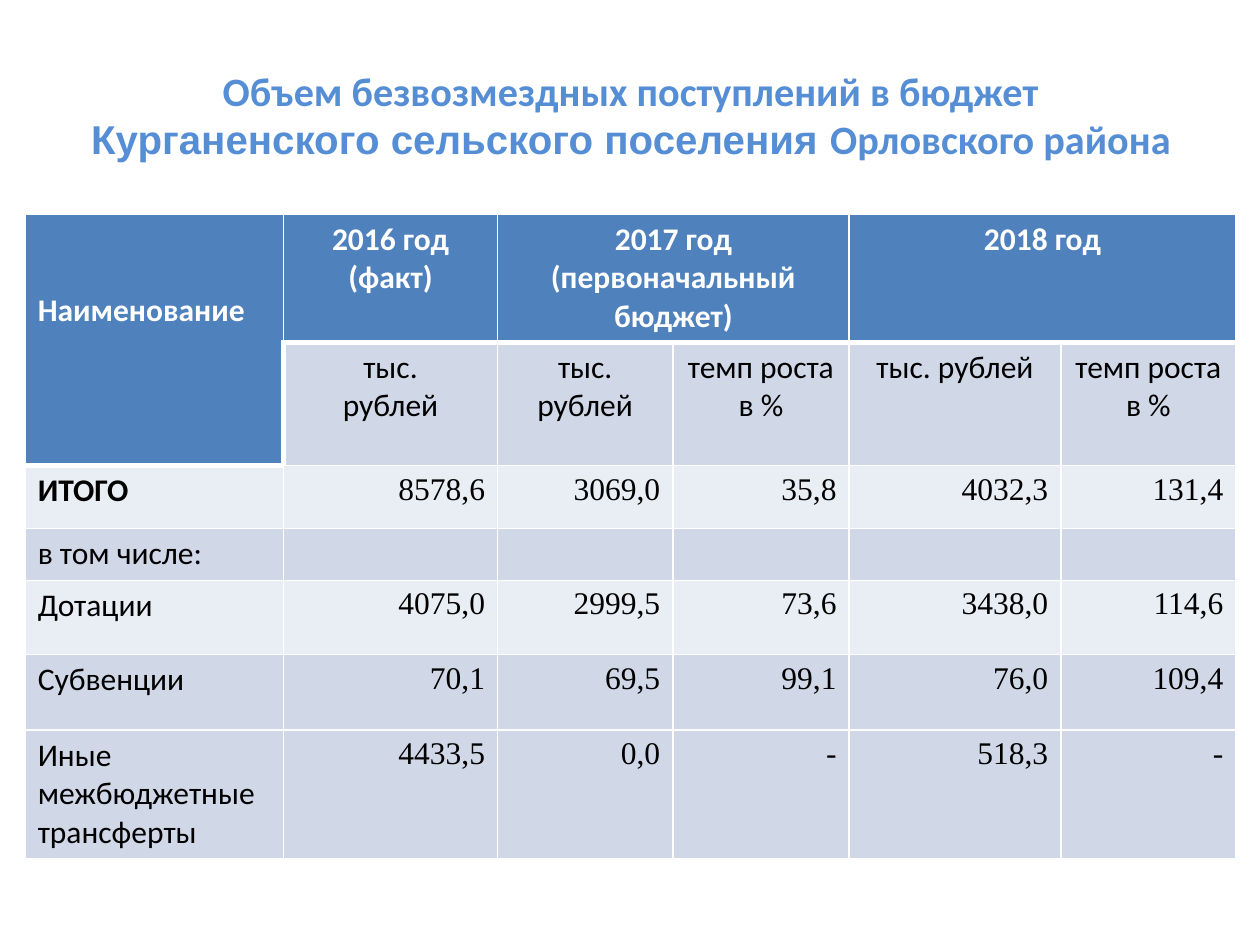
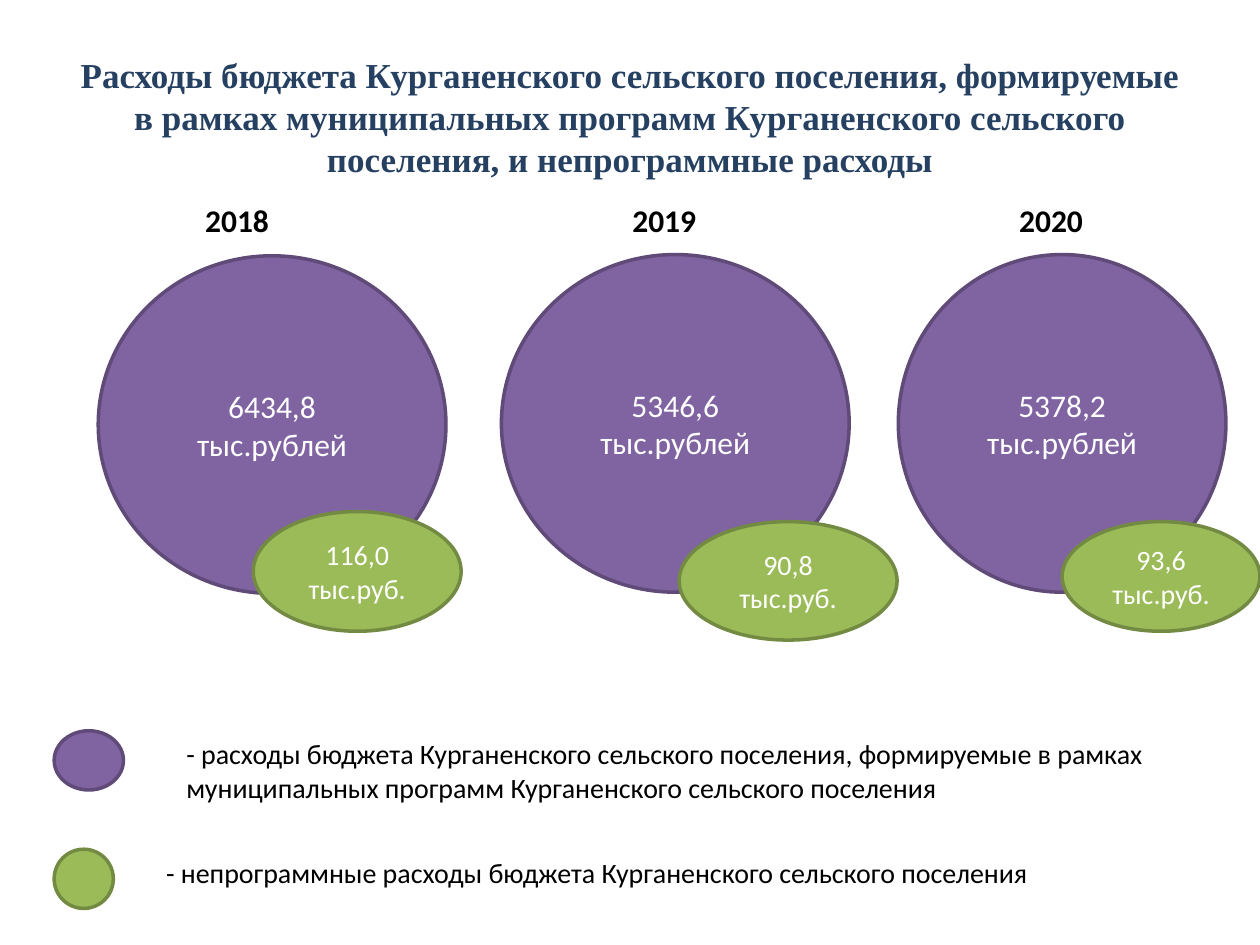
"""Builds two slides on the budget of a rural settlement: transfers received and programme spending."""
from dataclasses import dataclass

from lxml.etree import SubElement
from pptx import Presentation
from pptx.dml.color import RGBColor
from pptx.enum.shapes import MSO_SHAPE
from pptx.enum.text import MSO_ANCHOR, MSO_AUTO_SIZE, PP_ALIGN
from pptx.oxml.ns import qn
from pptx.util import Inches, Pt


@dataclass(frozen=True)
class Theme:
    white: str = "FFFFFF"
    black: str = "000000"
    sky: str = "558ED5"
    navy: str = "254061"
    header: str = "4F81BD"
    band_dark: str = "D0D8E8"
    band_light: str = "E9EDF4"
    programme: tuple = ("8064A2", "5F4A78")
    other: tuple = ("9BBB59", "738A42")
    sans: str = "Calibri"
    arial: str = "Arial"
    serif: str = "Times New Roman"
    large_title: int = 23
    title: int = 20
    body: int = 18
    small: int = 16
    outline: int = 2
    thin: int = 1
    thick: int = 3


class SlideBuilder:
    def __init__(self, theme):
        self.theme = theme
        self.deck = Presentation()
        self.deck.slide_width = Inches(10)
        self.deck.slide_height = Inches(7.5)
        self.page = None

    def style_span(self, span, size, color, bold=False, font=None):
        span.font.size = Pt(size)
        span.font.name = font or self.theme.sans
        span.font.bold = bold
        span.font.color.rgb = RGBColor.from_string(color)

    def set_text(self, frame, text, size, color, align=PP_ALIGN.LEFT, bold=False, font=None):
        frame.text = text
        frame.word_wrap = True
        for para in frame.paragraphs:
            para.alignment = align
            para.font.size = Pt(size)
            for span in para.runs:
                self.style_span(span, size, color, bold, font)

    def add_page(self, place, parts, size, color):
        self.page = self.deck.slides.add_slide(self.deck.slide_layouts[5])
        title = self.page.shapes.title
        title.left, title.top, title.width, title.height = map(Inches, place)
        frame = title.text_frame
        frame.auto_size = MSO_AUTO_SIZE.NONE
        frame.vertical_anchor = MSO_ANCHOR.MIDDLE
        para = frame.paragraphs[0]
        para.alignment = PP_ALIGN.CENTER
        for text, font in parts:
            span = para.add_run()
            span.text = text
            self.style_span(span, size, color, True, font)

    def add_label(self, place, text, size, bold=False):
        box = self.page.shapes.add_textbox(*map(Inches, place))
        self.set_text(box.text_frame, text, size, self.theme.black, bold=bold)

    def add_ellipse(self, place, colors, text="", size=None):
        oval = self.page.shapes.add_shape(MSO_SHAPE.OVAL, *map(Inches, place))
        fill, line = colors
        oval.shadow.inherit = False
        oval.fill.solid()
        oval.fill.fore_color.rgb = RGBColor.from_string(fill)
        oval.line.color.rgb = RGBColor.from_string(line)
        oval.line.width = Pt(self.theme.outline)
        if text:
            oval.text_frame.vertical_anchor = MSO_ANCHOR.MIDDLE
            self.set_text(oval.text_frame, text, size, self.theme.white, PP_ALIGN.CENTER)

    def add_table(self, place, widths, heights):
        frame = self.page.shapes.add_table(len(heights), len(widths), *map(Inches, place))
        table = frame.table
        table.first_row = table.horz_banding = False
        for column, width in zip(table.columns, widths):
            column.width = Inches(width)
        for row, height in zip(table.rows, heights):
            row.height = Inches(height)
        return table

    def paint_cell(self, cell, color, thick_sides):
        properties = cell._tc.get_or_add_tcPr()
        for side in "LRTB":
            width = self.theme.thick if side in thick_sides else self.theme.thin
            line = SubElement(properties, qn(f"a:ln{side}"), w=str(Pt(width)))
            SubElement(SubElement(line, qn("a:solidFill")), qn("a:srgbClr"), val=self.theme.white)
        cell.fill.solid()
        cell.fill.fore_color.rgb = RGBColor.from_string(color)


def thick_sides(row, column):
    if row == 0:
        return "B"
    if row == 1:
        return {0: "RB", 1: "LT"}.get(column, "T")
    return "T" if (row, column) == (2, 0) else ""


def build_transfers(builder):
    theme = builder.theme
    builder.add_page(
        (0.51, 0.36, 9, 1.1),
        [("Объем безвозмездных поступлений в бюджет ", theme.sans),
         ("Курганенского сельского поселения ", theme.arial),
         ("Орловского района", theme.sans)],
        theme.large_title, theme.sky)

    rows = [
        ["Наименование", "2016 год (факт)", "2017 год (первоначальный бюджет)", "", "2018 год", ""],
        ["", "тыс.\nрублей", "тыс. рублей", "темп роста в %", "тыс. рублей", "темп роста в %"],
        ["ИТОГО", "8578,6", "3069,0", "35,8", "4032,3", "131,4"],
        ["в том числе:", "", "", "", "", ""],
        ["Дотации", "4075,0", "2999,5", "73,6", "3438,0", "114,6"],
        ["Субвенции", "70,1", "69,5", "99,1", "76,0", "109,4"],
        ["Иные межбюджетные трансферты", "4433,5", "0,0", "-", "518,3", "-"],
    ]
    fills = [theme.header, theme.band_dark, theme.band_light, theme.band_dark,
             theme.band_light, theme.band_dark, theme.band_dark]
    table = builder.add_table((0.2, 1.7, 9.61, 5.1), [2.05, 1.7, 1.39, 1.4, 1.68, 1.39],
                              [1, 0.98, 0.5, 0.41, 0.59, 0.6, 1.02])

    for row, texts in enumerate(rows):
        for column, text in enumerate(texts):
            cell = table.cell(row, column)
            is_name = column == 0
            is_header = row == 0 or (row == 1 and is_name)
            is_value = row > 1 and not is_name
            builder.paint_cell(cell, theme.header if is_header else fills[row],
                               thick_sides(row, column))
            align = PP_ALIGN.LEFT if is_name else PP_ALIGN.RIGHT if is_value else PP_ALIGN.CENTER
            builder.set_text(cell.text_frame, text, theme.body,
                             theme.white if is_header else theme.black, align,
                             is_header or text == "ИТОГО", theme.serif if is_value else theme.sans)

    table.cell(0, 0).merge(table.cell(1, 0))
    table.cell(0, 0).margin_top = Inches(0.61)
    for column in (2, 4):
        table.cell(0, column).merge(table.cell(0, column + 1))


def build_spending(builder):
    theme = builder.theme
    builder.add_page(
        (0.5, 0.3, 9, 1.25),
        [("Расходы бюджета Курганенского сельского поселения, формируемые в рамках муниципальных "
          "программ Курганенского сельского поселения, и непрограммные расходы", theme.serif)],
        theme.title, theme.navy)

    years = [
        ("2018", 1.53, "6434,8", (0.78, 2.03, 2.76, 2.68), "116,0 тыс.руб.", (2.01, 4.06, 1.65, 0.95)),
        ("2019", 4.92, "5346,6", (3.98, 2.02, 2.76, 2.68), "90,8\nтыс.руб.", (5.39, 4.14, 1.73, 0.94)),
        ("2020", 7.99, "5378,2", (7.13, 2.02, 2.6, 2.68), "93,6 тыс.руб.", (8.43, 4.14, 1.57, 0.87)),
    ]
    for year, left, programme, programme_place, other, other_place in years:
        builder.add_label((left, 1.55, 0.79, 0.4), year, theme.body, bold=True)
        builder.add_ellipse(programme_place, theme.programme, f"{programme}\nтыс.рублей", theme.body)
        builder.add_ellipse(other_place, theme.other, other, theme.small)

    legend = [
        (theme.programme, (0.43, 5.8, 0.55, 0.47), (1.38, 5.8, 7.95, 0.64),
         "- расходы бюджета Курганенского сельского поселения, формируемые в рамках "
         "муниципальных программ Курганенского сельского поселения"),
        (theme.other, (0.43, 6.74, 0.47, 0.47), (1.22, 6.74, 7.95, 0.37),
         "- непрограммные расходы бюджета Курганенского сельского поселения"),
    ]
    for colors, marker_place, label_place, text in legend:
        builder.add_ellipse(marker_place, colors)
        builder.add_label(label_place, text, theme.small)


def main():
    builder = SlideBuilder(Theme())
    build_transfers(builder)
    build_spending(builder)
    builder.deck.save("out.pptx")


if __name__ == "__main__":
    main()
